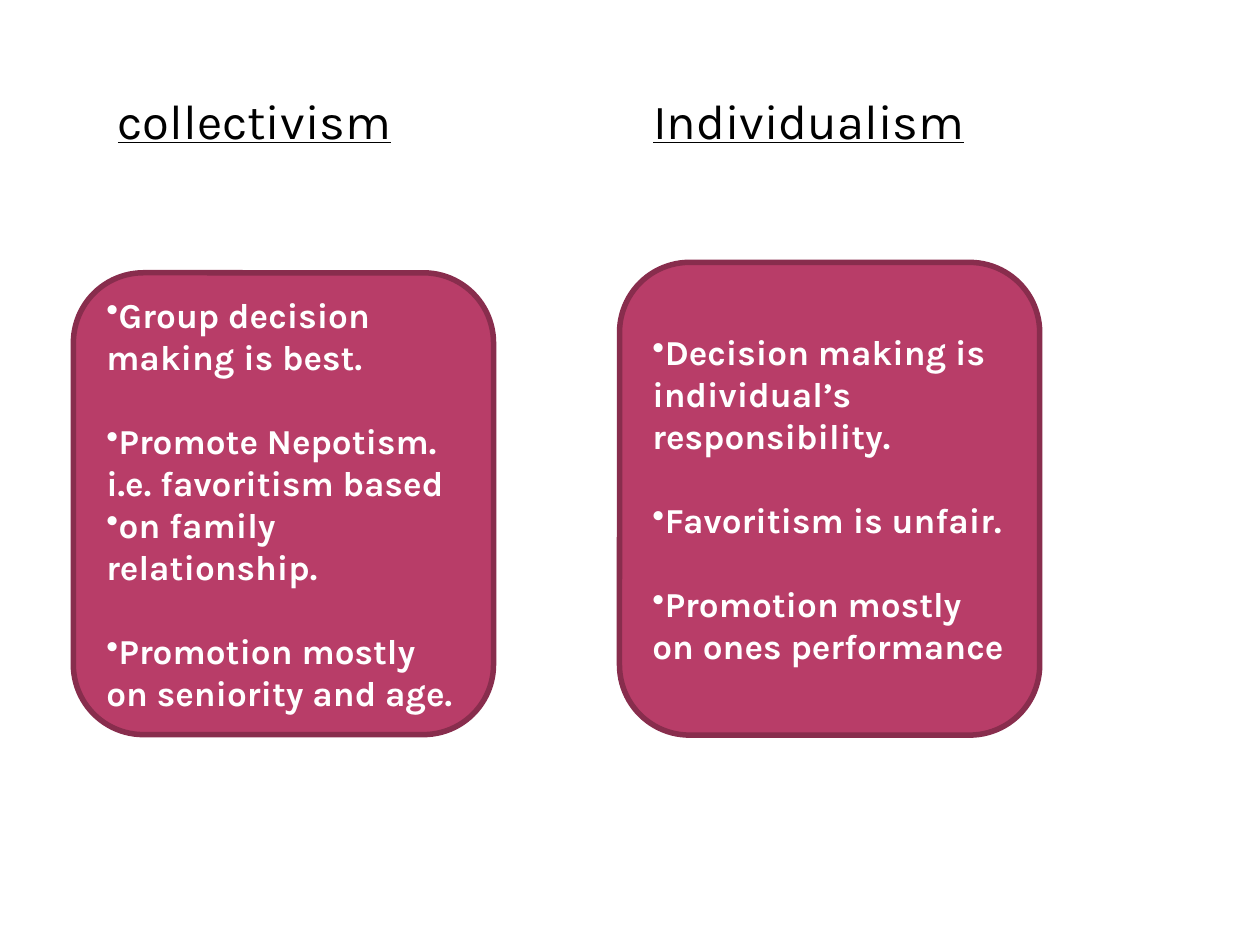
from lxml.etree import SubElement
from pptx import Presentation
from pptx.dml.color import RGBColor
from pptx.enum.shapes import MSO_SHAPE as Shape
from pptx.enum.text import MSO_ANCHOR as Anchor, MSO_AUTO_SIZE as AutoSize, PP_ALIGN as Align
from pptx.oxml.ns import qn
from pptx.util import Cm, Pt

FONT = "Karla"
COMPARISON_LAYOUT = 4

# Each point: its text and the space before it in points
COLLECTIVISM = [
    ("Group decision making is best.", 0),
    ("Promote Nepotism. i.e. favoritism based", 24),
    ("on family relationship.", 0),
    ("Promotion mostly on seniority and age.", 24),
]
INDIVIDUALISM = [
    ("Decision making is individual’s responsibility.", 0),
    ("Favoritism is unfair.", 24),
    ("Promotion mostly on ones performance", 24),
]


def color(hex_string):
    return RGBColor.from_string(hex_string)


def write_paragraph(paragraph, text, size=20, font_color="FFFFFF", bold=False,
                    underline=False, space_before=0, bullet=None):
    paragraph.text = text
    paragraph.alignment = Align.LEFT
    paragraph.space_before = Pt(space_before)
    if bullet:
        SubElement(paragraph._p.get_or_add_pPr(), qn("a:buChar"), char=bullet)
    font = paragraph.font
    font.name, font.size = FONT, Pt(size)
    font.bold, font.underline = bold, underline
    font.color.rgb = color(font_color)


def place_heading(placeholder, text, left, width):
    placeholder.left, placeholder.top = Cm(left), Cm(1.69)
    placeholder.width, placeholder.height = Cm(width), Cm(1.45)
    frame = placeholder.text_frame
    frame.vertical_anchor = Anchor.TOP
    frame.auto_size = AutoSize.SHAPE_TO_FIT_TEXT
    write_paragraph(frame.paragraphs[0], text, size=28, font_color="000000", underline=True)


def add_card(slide, points, left, top, height):
    card = slide.shapes.add_shape(Shape.ROUNDED_RECTANGLE, Cm(left), Cm(top), Cm(8.47), Cm(height))
    card.shadow.inherit = False
    card.fill.solid()
    card.fill.fore_color.rgb = color("B83D68")
    card.line.color.rgb = color("882D4D")
    card.line.width = Pt(3.15)
    frame = card.text_frame
    frame.word_wrap = True
    frame.vertical_anchor = Anchor.MIDDLE
    for number, (text, gap) in enumerate(points):
        paragraph = frame.add_paragraph() if number else frame.paragraphs[0]
        write_paragraph(paragraph, text, bold=True, space_before=gap, bullet="•")


def remove_empty_placeholders(slide):
    for placeholder in list(slide.placeholders):
        if not placeholder.text_frame.text:
            placeholder.element.getparent().remove(placeholder.element)


def main():
    presentation = Presentation()
    presentation.slide_width, presentation.slide_height = Cm(25.4), Cm(19.05)
    slide = presentation.slides.add_slide(presentation.slide_layouts[COMPARISON_LAYOUT])

    # Cards with the points of each culture
    add_card(slide, COLLECTIVISM, left=1.48, top=5.5, height=9.31)
    add_card(slide, INDIVIDUALISM, left=12.49, top=5.29, height=9.53)

    # Column headings
    place_heading(slide.placeholders[1], "collectivism", left=2.12, width=6.77)
    place_heading(slide.placeholders[3], "Individualism", left=12.91, width=9.74)

    remove_empty_placeholders(slide)
    presentation.save("out.pptx")


if __name__ == "__main__":
    main()
